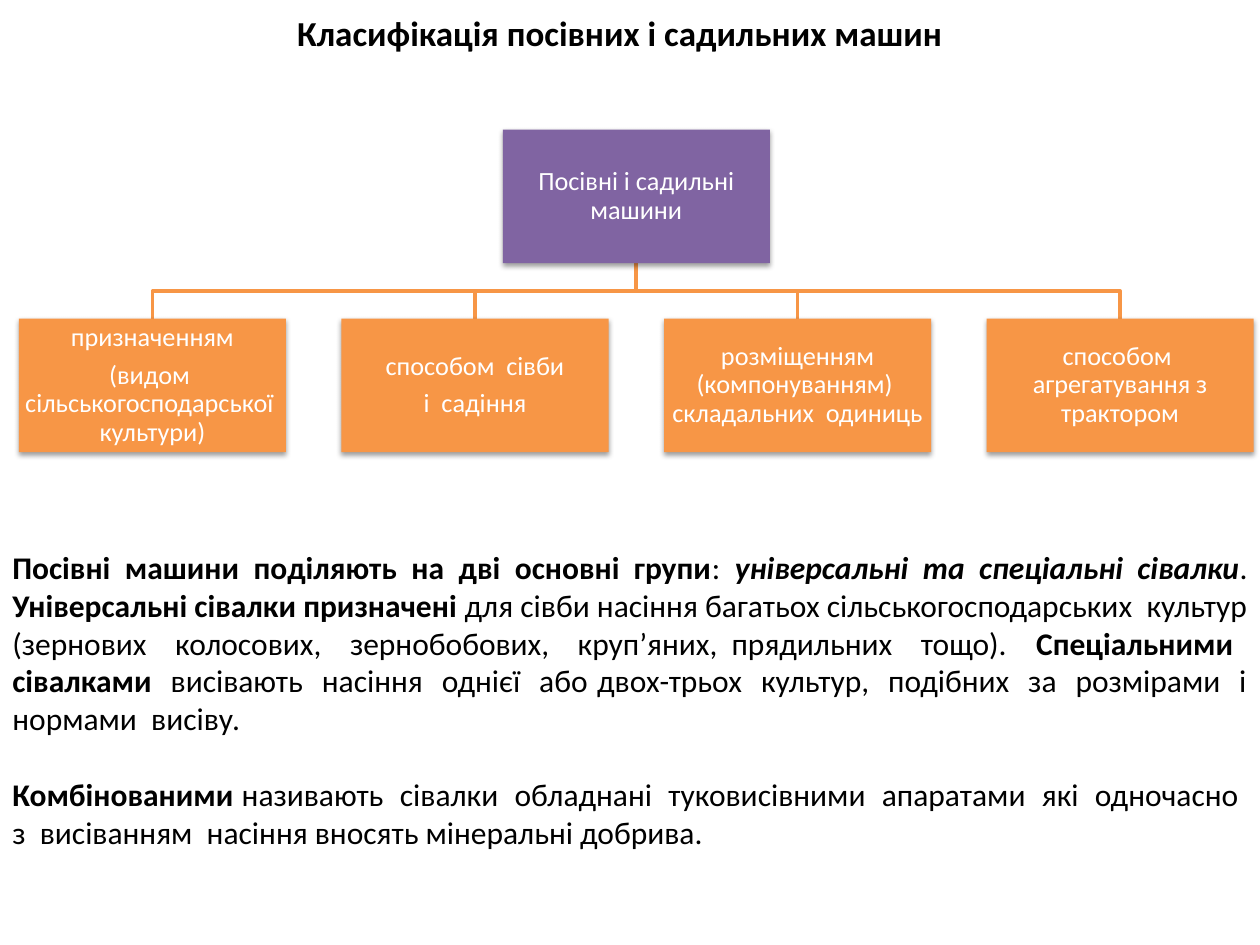
from lxml import etree
from pptx import Presentation
from pptx.dml.color import RGBColor
from pptx.enum.shapes import MSO_SHAPE
from pptx.enum.text import MSO_ANCHOR, MSO_AUTO_SIZE, PP_ALIGN
from pptx.oxml import parse_xml
from pptx.util import Inches, Pt

COLORS = {"root": "8064A2", "branch": "F79646", "light": "FFFFFF", "dark": "000000"}
DRAWING_NS = "http://schemas.openxmlformats.org/drawingml/2006/main"
BOX_SHADOW = etree.tostring(parse_xml(
    f'<a:effectLst xmlns:a="{DRAWING_NS}">'
    '<a:outerShdw blurRad="40000" dist="20000" dir="5400000" rotWithShape="0">'
    f'<a:srgbClr val="{COLORS["dark"]}"><a:alpha val="38000"/></a:srgbClr>'
    '</a:outerShdw></a:effectLst>'))


def write_text(shape, paragraphs, size, color, align=PP_ALIGN.CENTER, anchor=MSO_ANCHOR.TOP,
               margin=None, line_spacing=None, gap_after=0, auto_size=MSO_AUTO_SIZE.NONE):
    """Fill a shape; each paragraph is a list of (text, style), style holding b and/or i."""
    frame = shape.text_frame
    frame.word_wrap = True
    frame.auto_size = auto_size
    frame.vertical_anchor = anchor
    if margin is not None:
        frame.margin_left = frame.margin_right = margin
        frame.margin_top = frame.margin_bottom = margin
    for index, runs in enumerate(paragraphs):
        paragraph = frame.paragraphs[0] if index == 0 else frame.add_paragraph()
        paragraph.alignment = align
        paragraph.line_spacing = line_spacing
        paragraph.space_after = Pt(gap_after)
        for text, style in runs:
            run = paragraph.add_run()
            run.text = text
            run.font.name = "Calibri"
            run.font.size = Pt(size)
            run.font.bold = "b" in style
            run.font.italic = "i" in style
            run.font.color.rgb = RGBColor.from_string(COLORS[color])


def add_box(left, top, color, lines):
    box = slide.shapes.add_shape(MSO_SHAPE.RECTANGLE, Inches(left), Inches(top),
                                 Inches(BOX_WIDTH), Inches(BOX_HEIGHT))
    box.fill.solid()
    box.fill.fore_color.rgb = RGBColor.from_string(COLORS[color])
    box.line.fill.background()
    box._element.spPr.append(parse_xml(BOX_SHADOW))
    write_text(box, [[(line, "")] for line in lines], size=15, color="light",
               anchor=MSO_ANCHOR.MIDDLE, margin=Inches(0.01), line_spacing=0.9, gap_after=5.25)


presentation = Presentation()
presentation.slide_width = Inches(10)
presentation.slide_height = Inches(7.5)
slide = presentation.slides.add_slide(presentation.slide_layouts[6])

# Title
title = slide.shapes.add_textbox(Inches(1.14), Inches(0.04), Inches(7.56), Inches(0.44))
write_text(title, [[("Класифікація посівних і садильних машин", "b")]], size=20, color="dark",
           auto_size=MSO_AUTO_SIZE.SHAPE_TO_FIT_TEXT)

# Classification tree
BOX_WIDTH, BOX_HEIGHT = 2.12, 1.06
BRANCH_LEFT, BRANCH_STEP = 0.15, 2.56
ROOT_TOP, BRANCH_TOP = 1.03, 2.53
branches = [
    ["призначенням", "(видом  сільськогосподарської  культури)"],
    ["способом  сівби", "і  садіння"],
    ["розміщенням (компонуванням)  складальних  одиниць"],
    ["способом  агрегатування з трактором"],
]
branch_lefts = [BRANCH_LEFT + index * BRANCH_STEP for index in range(len(branches))]
root_left = (branch_lefts[0] + branch_lefts[-1]) / 2
root_center = root_left + BOX_WIDTH / 2
root_bottom = ROOT_TOP + BOX_HEIGHT
middle = (root_bottom + BRANCH_TOP) / 2

for left in reversed(branch_lefts):
    center = left + BOX_WIDTH / 2
    builder = slide.shapes.build_freeform(Inches(root_center), Inches(root_bottom))
    corners = [(root_center, middle), (center, middle), (center, BRANCH_TOP)]
    builder.add_line_segments([(Inches(x), Inches(y)) for x, y in corners], close=False)
    link = builder.convert_to_shape()
    link.shadow.inherit = False
    link.fill.background()
    link.line.color.rgb = RGBColor.from_string(COLORS["branch"])
    link.line.width = Pt(2)

add_box(root_left, ROOT_TOP, "root", ["Посівні і садильні машини"])
for left, lines in zip(branch_lefts, branches):
    add_box(left, BRANCH_TOP, "branch", lines)

# Explanation
explanation = [
    [("Посівні машини поділяють на дві основні групи", "b"),
     (": ", ""),
     ("універсальні та спеціальні сівалки", "bi"),
     (". ", ""),
     ("Універсальні сівалки призначені ", "b"),
     ("для сівби насіння багатьох сільськогосподарських  культур (зернових  колосових,  "
      "зернобобових,  круп’яних, прядильних  тощо).  ", ""),
     ("Спеціальними  сівалками  ", "b"),
     ("висівають  насіння  однієї  або двох-трьох  культур,  подібних  за  розмірами  "
      "і нормами  висіву.", "")],
    [("Комбінованими", "b"),
     (" називають  сівалки  обладнані  туковисівними  апаратами  які  одночасно  "
      "з  висіванням  насіння вносять мінеральні добрива.", "")],
]
body = slide.shapes.add_textbox(Inches(0), Inches(4.3), Inches(10), Inches(2.5))
write_text(body, explanation, size=18, color="dark", align=PP_ALIGN.JUSTIFY, gap_after=22,
           auto_size=MSO_AUTO_SIZE.SHAPE_TO_FIT_TEXT)

presentation.save("out.pptx")
